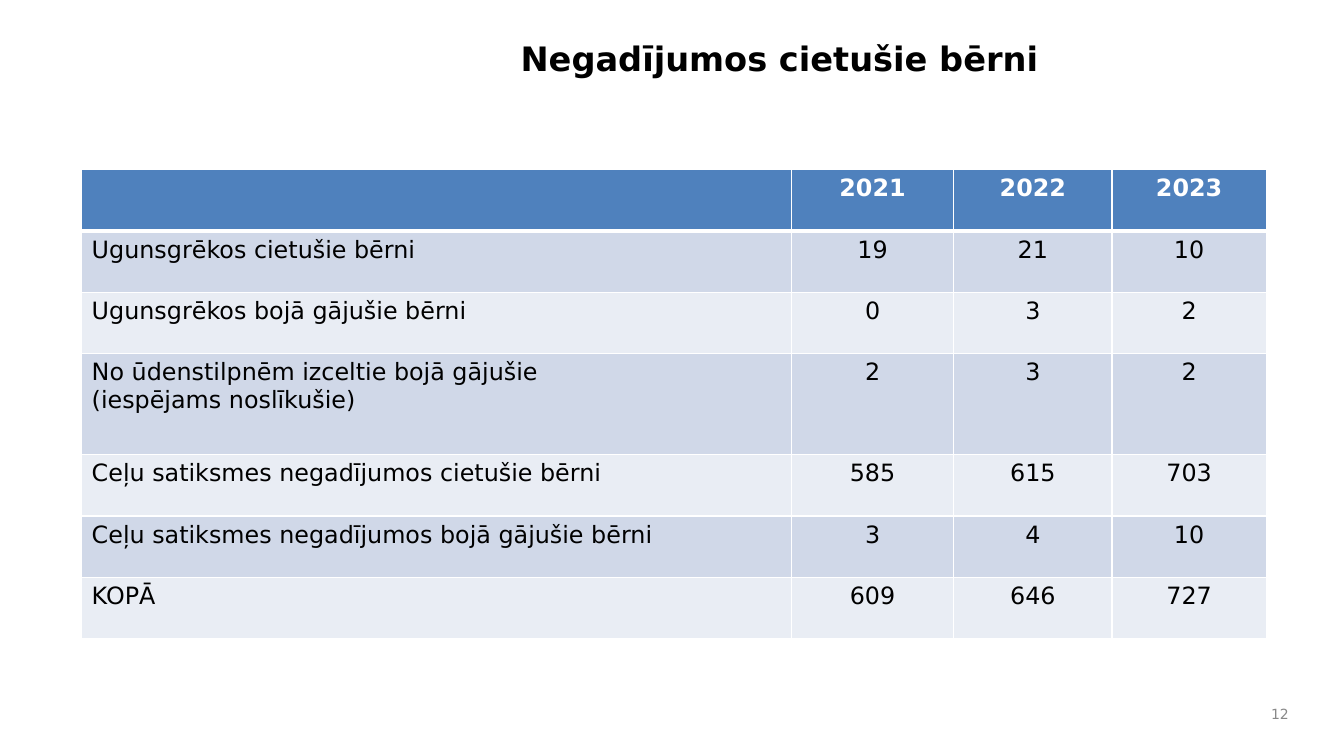
from lxml.etree import SubElement
from pptx import Presentation
from pptx.dml.color import RGBColor
from pptx.enum.text import MSO_ANCHOR as Anchor, PP_ALIGN as Align
from pptx.oxml.ns import qn
from pptx.util import Inches, Pt

HEADING = "Negadījumos cietušie bērni"
PAGE = "12"
YEARS = ("", "2021", "2022", "2023")
COUNTS = [
    ("Ugunsgrēkos cietušie bērni", 19, 21, 10),
    ("Ugunsgrēkos bojā gājušie bērni", 0, 3, 2),
    ("No ūdenstilpnēm izceltie bojā gājušie\n(iespējams noslīkušie)", 2, 3, 2),
    ("Ceļu satiksmes negadījumos cietušie bērni", 585, 615, 703),
    ("Ceļu satiksmes negadījumos bojā gājušie bērni", 3, 4, 10),
    ("KOPĀ", 609, 646, 727),
]
COLUMN_WIDTHS = (7.04, 1.61, 1.57, 1.53)
ROW_HEIGHT, TWO_LINE_HEIGHT = 0.61, 1
HEADER_FILL, BANDS = "4F81BD", ("E9EDF4", "D0D8E8")
BLACK, WHITE, GREY = "000000", "FFFFFF", "898989"


def color(value):
    return RGBColor.from_string(value)


def write(frame, words, align, ink, **font_format):
    frame.text = words
    for paragraph in frame.paragraphs:
        paragraph.alignment = align
        paragraph.font.color.rgb = color(ink)
        for run in paragraph.runs:
            run.font.color.rgb = color(ink)
            for key, value in {"name": "DejaVu Sans", **font_format}.items():
                setattr(run.font, key, value)


def add_words(slide, box, anchor, *words_and_style, **font_format):
    frame = slide.shapes.add_textbox(*map(Inches, box)).text_frame
    frame.word_wrap = True
    frame.vertical_anchor = anchor
    write(frame, *words_and_style, **font_format)


def add_borders(cell, widths):
    properties = cell._tc.get_or_add_tcPr()
    for side, width in widths.items():
        line = SubElement(properties, qn(f"a:{side}"), w=str(Pt(width)))
        paint = SubElement(line, qn("a:solidFill"))
        SubElement(paint, qn("a:srgbClr"), val=WHITE)


def add_counts(slide):
    rows = [YEARS, *COUNTS]
    heights = [TWO_LINE_HEIGHT if "\n" in row[0] else ROW_HEIGHT for row in rows]
    box = (0.81, 1.68, sum(COLUMN_WIDTHS), sum(heights))
    table = slide.shapes.add_table(len(rows), len(YEARS), *map(Inches, box)).table
    for column, width in zip(table.columns, COLUMN_WIDTHS):
        column.width = Inches(width)
    for r, (row, height) in enumerate(zip(rows, heights)):
        table.rows[r].height = Inches(height)
        header = r == 0
        for c, entry in enumerate(row):
            cell = table.cell(r, c)
            add_borders(cell, {"lnL": 1, "lnR": 1, "lnT": 3 if r == 1 else 1,
                               "lnB": 3 if header else 1})
            cell.fill.solid()
            cell.fill.fore_color.rgb = color(HEADER_FILL if header else BANDS[r % 2])
            write(cell.text_frame, str(entry), Align.CENTER if c else Align.LEFT,
                  WHITE if header else BLACK, size=Pt(17), bold=header)


def main():
    deck = Presentation()
    deck.slide_width, deck.slide_height = Inches(13.33), Inches(7.5)
    slide = deck.slides.add_slide(deck.slide_layouts[6])
    add_words(slide, (2.79, 0.33, 9.88, 1.17), Anchor.TOP,
              HEADING, Align.CENTER, BLACK, size=Pt(24), bold=True)
    add_counts(slide)
    add_words(slide, (12.44, 6.92, 0.44, 0.33), Anchor.MIDDLE,
              PAGE, Align.RIGHT, GREY, size=Pt(10))
    deck.save("out.pptx")


if __name__ == "__main__":
    main()
